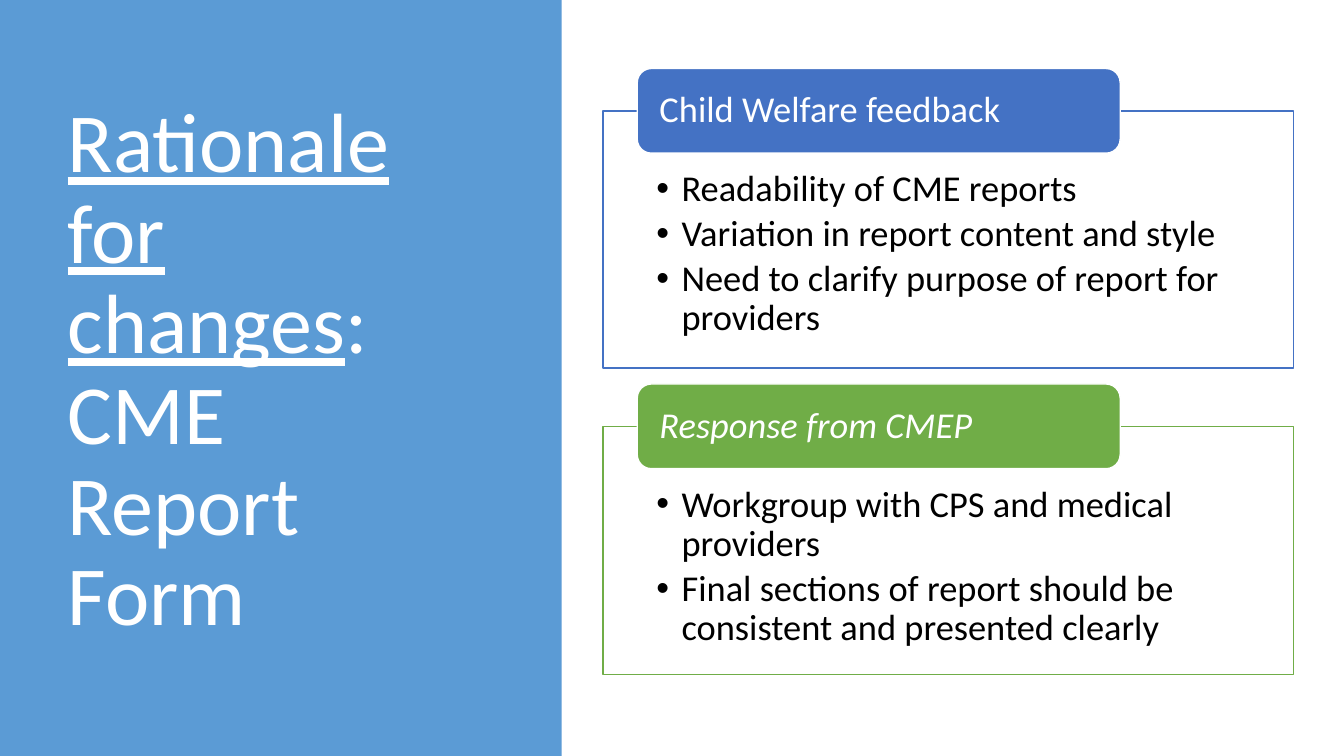
from pptx import Presentation
from pptx.dml.color import RGBColor
from pptx.enum.shapes import MSO_SHAPE as Kind
from pptx.enum.text import MSO_ANCHOR as Anchor, MSO_AUTO_SIZE as Fit, PP_ALIGN as Align
from pptx.oxml.ns import qn
from pptx.util import Inches, Pt
from lxml.etree import SubElement

WHITE, BLACK, SKY = "FFFFFF", "000000", "5B9BD5"
LEFT, WIDE = 5.98, 6.85
TAB_H = 0.84

# heading, italic, colour, top of tab, height of box, points
GROUPS = [
    ("Child Welfare feedback", False, "4472C4", 0.68, 2.55,
     ["Readability of CME reports",
      "Variation in report content and style",
      "Need to clarify purpose of report for providers"]),
    ("Response from CMEP", True, "70AD47", 3.81, 2.46,
     ["Workgroup with CPS and medical providers",
      "Final sections of report should be consistent and presented clearly"]),
]


def color(code):
    return RGBColor.from_string(code)


def add_block(slide, kind, place, fill, line=None):
    block = slide.shapes.add_shape(kind, *map(Inches, place))
    block.shadow.inherit = False
    block.fill.solid()
    block.fill.fore_color.rgb = color(fill)
    if line:
        block.line.color.rgb = color(line)
        block.line.width = Pt(1)
    else:
        block.line.fill.background()
    return block


def set_frame(frame, insets, anchor):
    frame.word_wrap = True
    frame.auto_size = Fit.NONE
    frame.vertical_anchor = anchor
    (frame.margin_left, frame.margin_top,
     frame.margin_right, frame.margin_bottom) = map(Inches, insets)


def style(para, size, code, italic=None):
    para.alignment = Align.LEFT
    para.line_spacing = 0.9
    for run in para.runs:
        run.font.name = "Calibri"
        run.font.size = Pt(size)
        run.font.color.rgb = color(code)
        run.font.italic = italic


def add_bullet(para):
    props = para._p.get_or_add_pPr()
    props.set("marL", str(Inches(0.25)))
    props.set("indent", str(Inches(-0.25)))
    SubElement(props, qn("a:buFont")).set("typeface", "Arial")
    SubElement(props, qn("a:buChar")).set("char", "•")


def add_list(slide, place, code, points):
    box = add_block(slide, Kind.RECTANGLE, place, WHITE, code)
    tint = box.element.spPr.find(qn("a:solidFill"))[0]
    SubElement(tint, qn("a:alpha")).set("val", "90000")
    frame = box.text_frame
    set_frame(frame, (0.53, 0.59, 0.53, 0.2), Anchor.TOP)
    frame.text = "\n".join(points)
    for para in frame.paragraphs:
        para.level = 1
        style(para, 26, BLACK)
        para.space_after = Pt(4)
        add_bullet(para)


def add_tab(slide, place, code, text, italic):
    tab = add_block(slide, Kind.ROUNDED_RECTANGLE, place, code, WHITE)
    set_frame(tab.text_frame, (0.18, 0, 0.18, 0), Anchor.MIDDLE)
    tab.text_frame.text = text
    style(tab.text_frame.paragraphs[0], 26, WHITE, italic)


def add_group(slide, head, italic, code, top, high, points):
    add_list(slide, (LEFT, top + TAB_H / 2, WIDE, high), code, points)
    add_tab(slide, (LEFT + 0.34, top, 4.79, TAB_H), code, head, italic)


def set_title(slide):
    title = slide.shapes.title
    title.left, title.top = Inches(0.57), Inches(0.68)
    title.width, title.height = Inches(4.16), Inches(6.02)
    set_frame(title.text_frame, (0.1, 0.05, 0.1, 0.05), Anchor.MIDDLE)
    para = title.text_frame.paragraphs[0]
    for text, under in (("Rationale for changes", True), (": CME Report Form", False)):
        run = para.add_run()
        run.text = text
        run.font.underline = under
    style(para, 60, WHITE)


def main():
    deck = Presentation()
    deck.slide_width, deck.slide_height = Inches(13.33), Inches(7.5)
    slide = deck.slides.add_slide(deck.slide_layouts[5])
    panel = add_block(slide, Kind.RECTANGLE, (0, 0, 5.57, 7.5), SKY)
    slide.shapes.title.element.addprevious(panel.element)
    set_title(slide)
    for group in GROUPS:
        add_group(slide, *group)
    deck.save("out.pptx")


if __name__ == "__main__":
    main()
